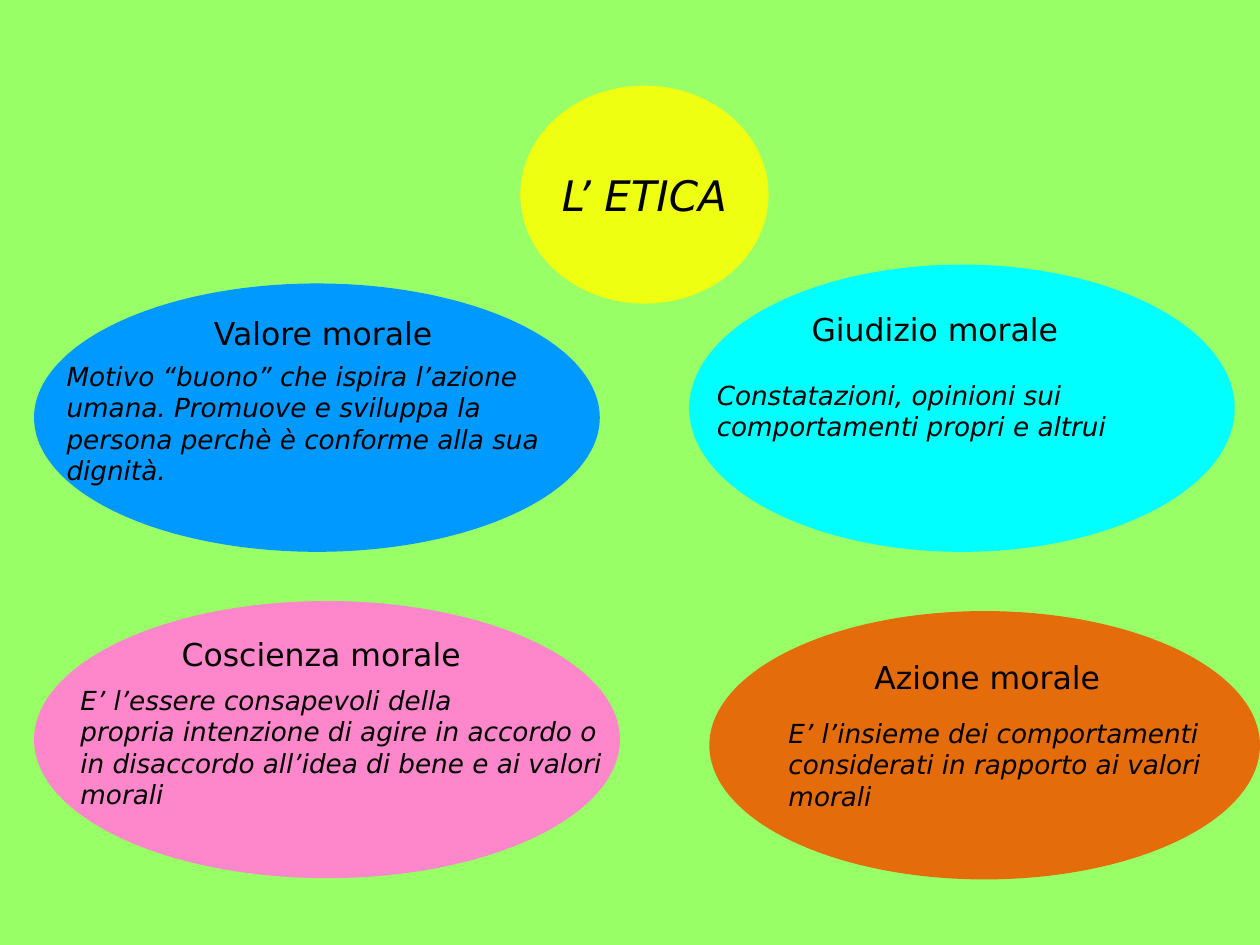
from pptx import Presentation
from pptx.dml.color import RGBColor
from pptx.enum.shapes import MSO_SHAPE
from pptx.enum.text import MSO_ANCHOR, MSO_AUTO_SIZE, PP_ALIGN
from pptx.util import Inches, Pt

OVAL = MSO_SHAPE.OVAL
CENTER, LEFT = PP_ALIGN.CENTER, PP_ALIGN.LEFT
MIDDLE = MSO_ANCHOR.MIDDLE
GROW = MSO_AUTO_SIZE.SHAPE_TO_FIT_TEXT

FONT = "DejaVu Sans"
BLACK = RGBColor(0x00, 0x00, 0x00)
GREEN = RGBColor(0x99, 0xFF, 0x66)
YELLOW = RGBColor(0xEE, 0xFF, 0x11)
CYAN = RGBColor(0x00, 0xFF, 0xFF)
ORANGE = RGBColor(0xE4, 0x6C, 0x0A)
BLUE = RGBColor(0x00, 0x99, 0xFF)
PINK = RGBColor(0xFD, 0x87, 0xCA)


def add_ellipse(shapes, box, color):
    ellipse = shapes.add_shape(OVAL, *map(Inches, box))
    ellipse.shadow.inherit = False
    ellipse.fill.solid()
    ellipse.fill.fore_color.rgb = color
    ellipse.line.fill.background()
    return ellipse


def write(frame, lines, size, italic, align, wrap):
    """Fill a text frame with one paragraph per line, all styled alike."""
    frame.word_wrap = wrap
    frame.text = "\n".join(lines)
    for paragraph in frame.paragraphs:
        paragraph.alignment = align
        paragraph.font.name = FONT
        paragraph.font.size = Pt(size)
        paragraph.font.italic = italic
        paragraph.font.color.rgb = BLACK


prs = Presentation()
prs.slide_width, prs.slide_height = Inches(10), Inches(7.5)
slide = prs.slides.add_slide(prs.slide_layouts[6])
slide.background.fill.solid()
slide.background.fill.fore_color.rgb = GREEN

topic = add_ellipse(slide.shapes, (4.13, 0.68, 1.97, 1.73), YELLOW)
topic.text_frame.vertical_anchor = MIDDLE
write(topic.text_frame, ["L’ ETICA"], 24, True, CENTER, False)

# Colour, ellipse box, heading and its box, definition and its box
concepts = [
    (CYAN, (5.47, 2.1, 4.33, 2.28),
     "Giudizio morale", (6.22, 2.41, 2.4, 0.4),
     ["Constatazioni, opinioni sui comportamenti propri e altrui"],
     (5.59, 2.96, 3.88, 0.6)),
    (ORANGE, (5.63, 4.85, 4.37, 2.13),
     "Azione morale", (6.73, 5.17, 2.21, 0.4),
     ["E’ l’insieme dei comportamenti",
      "considerati in rapporto ai valori morali"],
     (6.16, 5.64, 3.84, 0.85)),
    (BLUE, (0.27, 2.25, 4.49, 2.13),
     "Valore morale", (1.48, 2.44, 2.17, 0.4),
     ["Motivo “buono” che ispira l’azione umana. Promuove e sviluppa "
      "la persona perchè è conforme alla sua dignità."],
     (0.43, 2.81, 4.29, 1.1)),
    (PINK, (0.27, 4.77, 4.65, 2.2),
     "Coscienza morale", (1.22, 4.99, 2.66, 0.4),
     ["E’ l’essere consapevoli della",
      "propria intenzione di agire in accordo o in disaccordo "
      "all’idea di bene e ai valori morali"],
     (0.54, 5.38, 4.49, 1.1)),
]

for color, ellipse_box, heading, heading_box, definition, definition_box in concepts:
    concept = slide.shapes.add_group_shape().shapes
    add_ellipse(concept, ellipse_box, color)
    heading_frame = concept.add_textbox(*map(Inches, heading_box)).text_frame
    write(heading_frame, [heading], 18, False, CENTER, False)
    definition_frame = concept.add_textbox(*map(Inches, definition_box)).text_frame
    write(definition_frame, definition, 15, True, LEFT, True)
    heading_frame.auto_size = definition_frame.auto_size = GROW

prs.save("out.pptx")
